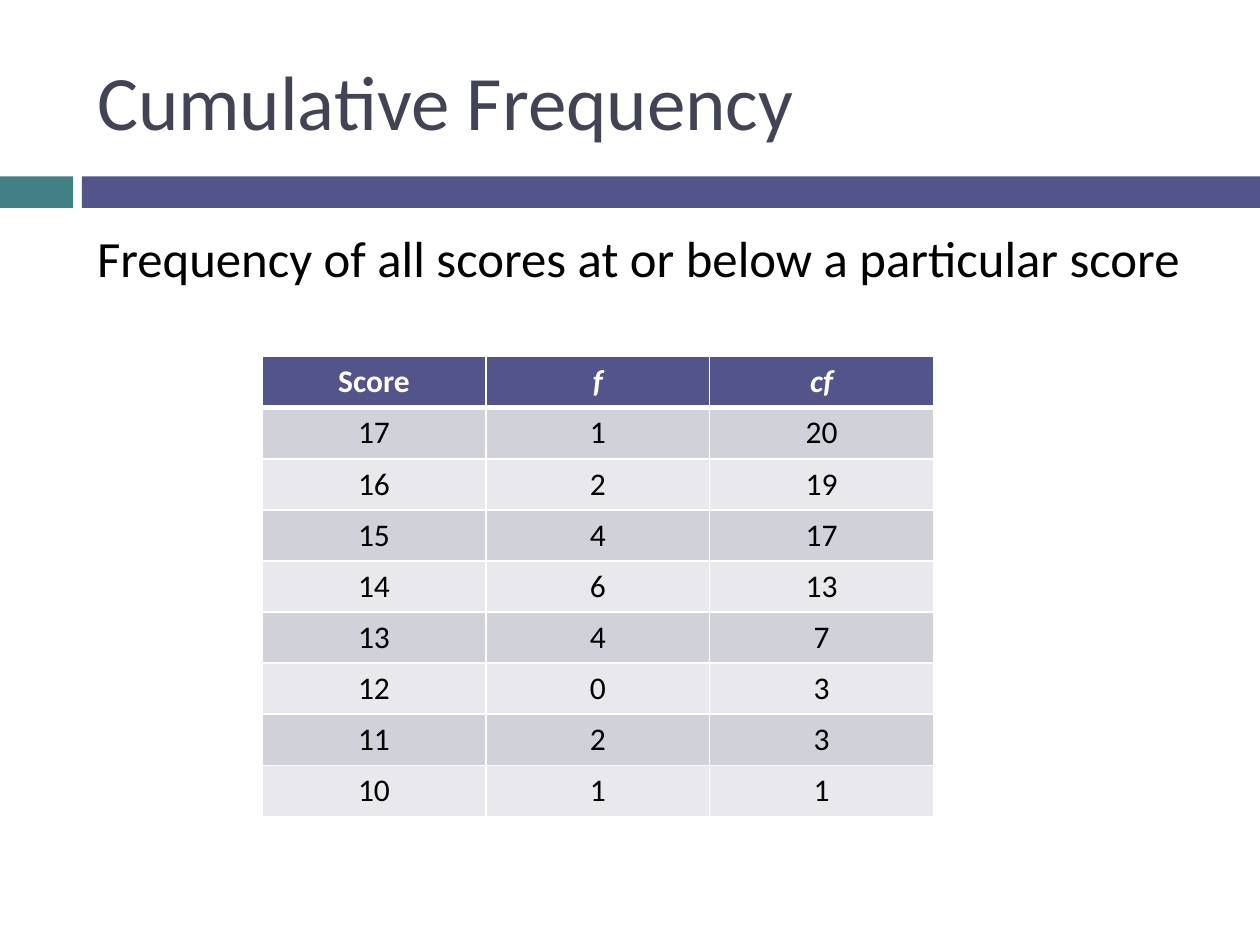
import pptx
import pptx.dml.color
import pptx.enum.shapes
import pptx.enum.text
import pptx.oxml
import pptx.oxml.ns
import pptx.util
from pptx.util import Inches

FONT = "Calibri"
INDIGO, TEAL, SLATE = "53548A", "438086", "424456"
BLACK, WHITE = "000000", "FFFFFF"
BANDS = ("D1D1DA", "E9E9ED")

HEADERS = ("Score", "f", "cf")
FREQUENCIES = (
    (17, 1, 20),
    (16, 2, 19),
    (15, 4, 17),
    (14, 6, 13),
    (13, 4, 7),
    (12, 0, 3),
    (11, 2, 3),
    (10, 1, 1),
)


def color(value):
    return pptx.dml.color.RGBColor.from_string(value)


def write_text(frame, text, size, fill=BLACK, bold=False, italic=False,
               align=pptx.enum.text.PP_ALIGN.LEFT,
               anchor=pptx.enum.text.MSO_ANCHOR.TOP):
    """Write one formatted paragraph and return it."""
    frame.word_wrap = True
    frame.vertical_anchor = anchor
    paragraph = frame.paragraphs[0]
    paragraph.alignment = align
    run = paragraph.add_run()
    run.text = text
    run.font.name = FONT
    run.font.size = pptx.util.Pt(size)
    run.font.bold = bold
    run.font.italic = italic
    run.font.color.rgb = color(fill)
    return paragraph


def set_borders(cell, **widths):
    """Draw white cell borders; widths in points, keyed L, R, T and B in that order."""
    properties = cell._tc.get_or_add_tcPr()
    for side, width in widths.items():
        properties.append(pptx.oxml.parse_xml(
            f'<a:ln{side} {pptx.oxml.ns.nsdecls("a")} w="{pptx.util.Pt(width)}">'
            f'<a:solidFill><a:srgbClr val="{WHITE}"/></a:solidFill></a:ln{side}>'))


class SlideBuilder:
    """Holds the current slide and its style."""

    def __init__(self, slide):
        self.slide = slide

    def bar(self, left, top, width, height, fill):
        shape = self.slide.shapes.add_shape(
            pptx.enum.shapes.MSO_SHAPE.RECTANGLE,
            Inches(left), Inches(top), Inches(width), Inches(height))
        shape.shadow.inherit = False
        shape.fill.solid()
        shape.fill.fore_color.rgb = color(fill)
        shape.line.fill.background()

    def placeholder(self, index, left, top, width, height, text, size, **style):
        shape = self.slide.placeholders[index]
        shape.left, shape.top = Inches(left), Inches(top)
        shape.width, shape.height = Inches(width), Inches(height)
        shape.text_frame.auto_size = pptx.enum.text.MSO_AUTO_SIZE.NONE
        return write_text(shape.text_frame, text, size, **style)

    def plain_item(self, paragraph, indent, space_before):
        """Give a list paragraph a hanging indent without a bullet."""
        paragraph.space_before = pptx.util.Pt(space_before)
        properties = paragraph._p.get_or_add_pPr()
        properties.set("marL", str(Inches(indent)))
        properties.set("indent", str(-Inches(indent)))
        properties.append(pptx.oxml.parse_xml(
            f'<a:buNone {pptx.oxml.ns.nsdecls("a")}/>'))

    def table(self, left, top, width, height, headers, rows):
        table = self.slide.shapes.add_table(
            len(rows) + 1, len(headers),
            Inches(left), Inches(top), Inches(width), Inches(height)).table
        for row, values in enumerate((headers, *rows)):
            is_header = row == 0
            for column, value in enumerate(values):
                cell = table.cell(row, column)
                set_borders(cell, L=1, R=1, T=3 if row == 1 else 1,
                            B=3 if is_header else 1)
                cell.fill.solid()
                cell.fill.fore_color.rgb = color(
                    INDIGO if is_header else BANDS[(row - 1) % 2])
                write_text(cell.text_frame, str(value), 18,
                           fill=WHITE if is_header else BLACK,
                           bold=is_header, italic=is_header and column > 0,
                           align=pptx.enum.text.PP_ALIGN.CENTER)


def main():
    presentation = pptx.Presentation()
    presentation.slide_width = Inches(10)
    presentation.slide_height = Inches(7.5)
    layout = presentation.slide_layouts[1]
    builder = SlideBuilder(presentation.slides.add_slide(layout))

    builder.bar(0, 1.4, 0.58, 0.25, TEAL)
    builder.bar(0.65, 1.4, 9.35, 0.25, INDIGO)
    builder.placeholder(0, 0.67, 0.25, 8.92, 1.08, "Cumulative Frequency", 44,
                        fill=SLATE, anchor=pptx.enum.text.MSO_ANCHOR.MIDDLE)
    definition = builder.placeholder(
        1, 0.67, 1.75, 8.92, 4.92,
        "Frequency of all scores at or below a particular score", 29)
    builder.plain_item(definition, 0.35, 7)
    builder.table(2.08, 2.83, 5.33, 3.65, HEADERS, FREQUENCIES)

    presentation.save("out.pptx")


if __name__ == "__main__":
    main()
